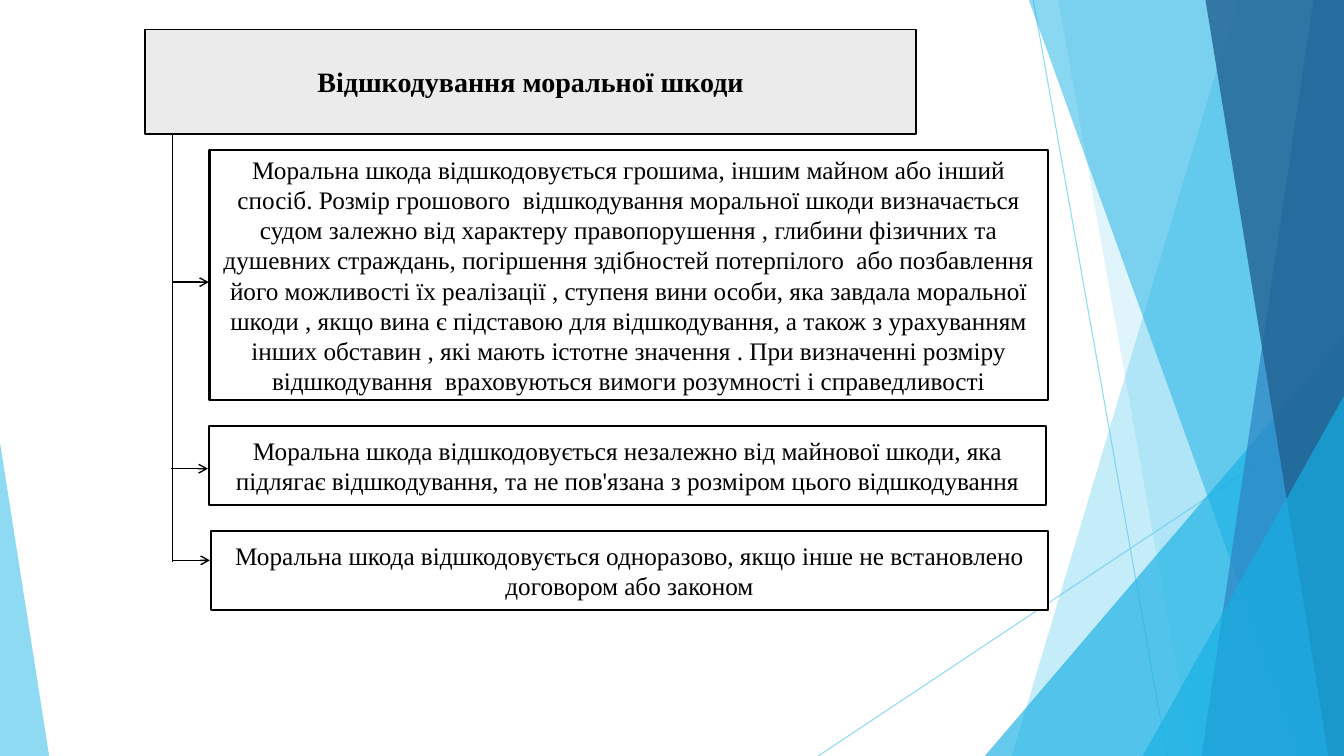
from dataclasses import dataclass

from lxml import etree
from pptx import Presentation
from pptx import util as u
from pptx.dml.color import RGBColor
from pptx.enum import shapes, text
from pptx.oxml.ns import qn

WIDTH, HEIGHT = 33.87, 19.05
FONT = "Times New Roman"
COLORS = {
    "sky": "5FCBEF",
    "azure": "17B0E4",
    "blue": "2E83C3",
    "navy": "226292",
    "black": "000000",
    "white": "FFFFFF",
    "gray": "EBEBEB",
}


@dataclass
class Line:
    start: tuple[float, float]
    end: tuple[float, float]
    color: str = "black"
    weight: float = 1
    opacity: int = 100
    arrow: bool = False


@dataclass
class Band:
    """Facet reaching from a slanted left edge to the right side of the page."""
    top_x: float
    bottom_x: float
    color: str
    opacity: int


@dataclass
class Triangle:
    """Facet standing on the bottom of the page."""
    left: float
    top: float
    width: float
    apex: float
    color: str
    opacity: int


@dataclass
class Box:
    left: float
    top: float
    width: float
    height: float
    words: str
    fill: str = "white"
    border: float = 1.5
    size: int = 18
    bold: bool = False


RAYS = [
    Line((26.04, 0), (29.41, HEIGHT), "sky", 0.75, 70),
    Line((WIDTH, 10.24), (20.62, HEIGHT), "sky", 0.75, 70),
]
FACETS = [
    Band(31.19, 25.5, "sky", 36),
    Band(26.67, 30.05, "sky", 20),
    Triangle(24.82, 8.46, 9.05, 1, "azure", 66),
    Band(25.93, 32.79, "azure", 50),
    Band(33.1, 30.28, "blue", 70),
    Band(30.38, 33.48, "navy", 80),
    Triangle(28.8, 9.98, 5.07, 1, "azure", 66),
    Triangle(0, 11.15, 1.24, 0, "sky", 70),
]
BOXES = [
    Box(3.66, 0.74, 19.43, 2.64, "Відшкодування моральної шкоди",
        "gray", 1, 20, True),
    Box(5.28, 3.78, 21.13, 6.3,
        "Моральна шкода відшкодовується грошима, іншим майном або інший спосіб. "
        "Розмір грошового  відшкодування моральної шкоди визначається судом "
        "залежно від характеру правопорушення , глибини фізичних та душевних "
        "страждань, погіршення здібностей потерпілого  або позбавлення його "
        "можливості їх реалізації , ступеня вини особи, яка завдала моральної "
        "шкоди , якщо вина є підставою для відшкодування, а також з урахуванням "
        "інших обставин , які мають істотне значення . При визначенні розміру "
        "відшкодування  враховуються вимоги розумності і справедливості"),
    Box(5.26, 10.74, 21.11, 1.98,
        "Моральна шкода відшкодовується незалежно від майнової шкоди, яка "
        "підлягає відшкодування, та не пов'язана з розміром цього відшкодування"),
    Box(5.31, 13.39, 21.11, 1.98,
        "Моральна шкода відшкодовується одноразово, якщо інше не встановлено "
        "договором або законом"),
]
TRUNK = Line((4.34, 3.38), (4.34, 14.15))
BRANCHES = [
    Line((x, y), (x + 0.92, y), arrow=True)
    for x, y in [(4.34, 7.11), (4.32, 11.81), (4.37, 14.12)]
]


def rgb(name: str) -> RGBColor:
    return RGBColor.from_string(COLORS[name])


def set_opacity(shape, percent: int) -> None:
    for color in shape._element.iter(qn("a:srgbClr")):
        etree.SubElement(color, qn("a:alpha"), val=str(percent * 1000))


def draw_line(page, line: Line) -> None:
    points = [u.Cm(value) for value in line.start + line.end]
    connector = page.shapes.add_connector(shapes.MSO_CONNECTOR.STRAIGHT, *points)
    connector.line.color.rgb = rgb(line.color)
    connector.line.width = u.Pt(line.weight)
    if line.opacity < 100:
        set_opacity(connector, line.opacity)
    if line.arrow:
        etree.SubElement(connector.line._get_or_add_ln(), qn("a:tailEnd"), type="arrow")
    etree.SubElement(connector._element.spPr, qn("a:effectLst"))


def add_band(page, band: Band):
    corners = [(WIDTH, 0), (WIDTH, HEIGHT), (band.bottom_x, HEIGHT)]
    builder = page.shapes.build_freeform(u.Cm(band.top_x), 0)
    builder.add_line_segments([(u.Cm(x), u.Cm(y)) for x, y in corners])
    return builder.convert_to_shape()


def add_triangle(page, triangle: Triangle):
    shape = page.shapes.add_shape(
        shapes.MSO_SHAPE.ISOSCELES_TRIANGLE, u.Cm(triangle.left), u.Cm(triangle.top),
        u.Cm(triangle.width), u.Cm(HEIGHT - triangle.top))
    shape.adjustments[0] = triangle.apex
    return shape


def draw_facet(page, facet: Band | Triangle) -> None:
    add = add_band if isinstance(facet, Band) else add_triangle
    shape = add(page, facet)
    shape.shadow.inherit = False
    shape.fill.solid()
    shape.fill.fore_color.rgb = rgb(facet.color)
    shape.line.fill.background()
    set_opacity(shape, facet.opacity)


def draw_box(page, box: Box) -> None:
    shape = page.shapes.add_shape(
        shapes.MSO_SHAPE.RECTANGLE, u.Cm(box.left), u.Cm(box.top),
        u.Cm(box.width), u.Cm(box.height))
    shape.shadow.inherit = False
    shape.fill.solid()
    shape.fill.fore_color.rgb = rgb(box.fill)
    shape.line.color.rgb = rgb("black")
    shape.line.width = u.Pt(box.border)
    frame = shape.text_frame
    frame.word_wrap = True
    frame.vertical_anchor = text.MSO_ANCHOR.MIDDLE
    para = frame.paragraphs[0]
    para.alignment = text.PP_ALIGN.CENTER
    span = para.add_run()
    span.text = box.words
    span.font.name = FONT
    span.font.size = u.Pt(box.size)
    span.font.bold = box.bold
    span.font.color.rgb = rgb("black")


def main() -> None:
    deck = Presentation()
    deck.slide_width, deck.slide_height = u.Cm(WIDTH), u.Cm(HEIGHT)
    page = deck.slides.add_slide(deck.slide_layouts[6])
    for ray in RAYS:
        draw_line(page, ray)
    for facet in FACETS:
        draw_facet(page, facet)
    for box in BOXES:
        draw_box(page, box)
    for line in [TRUNK, *BRANCHES]:
        draw_line(page, line)
    deck.save("out.pptx")


if __name__ == "__main__":
    main()
